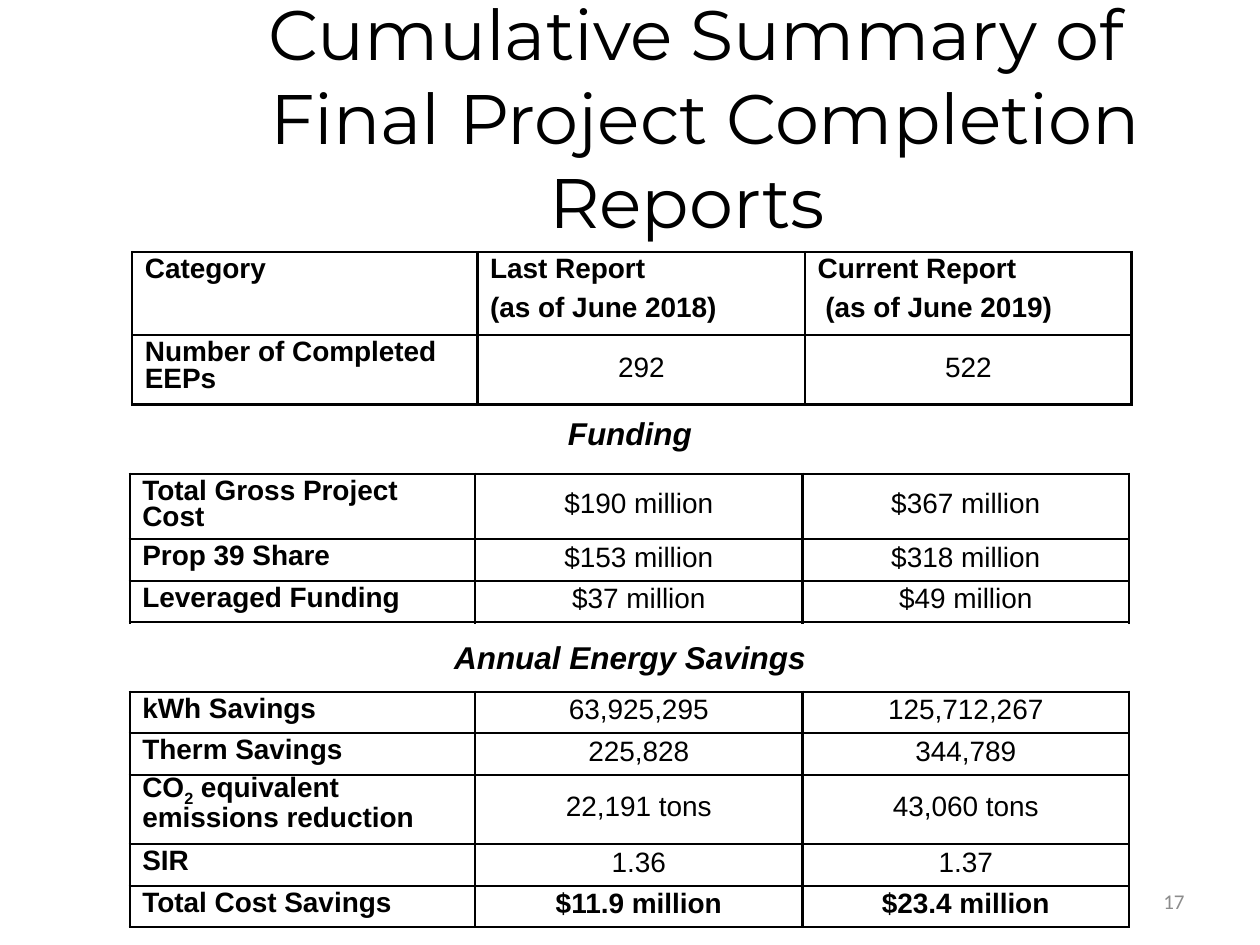
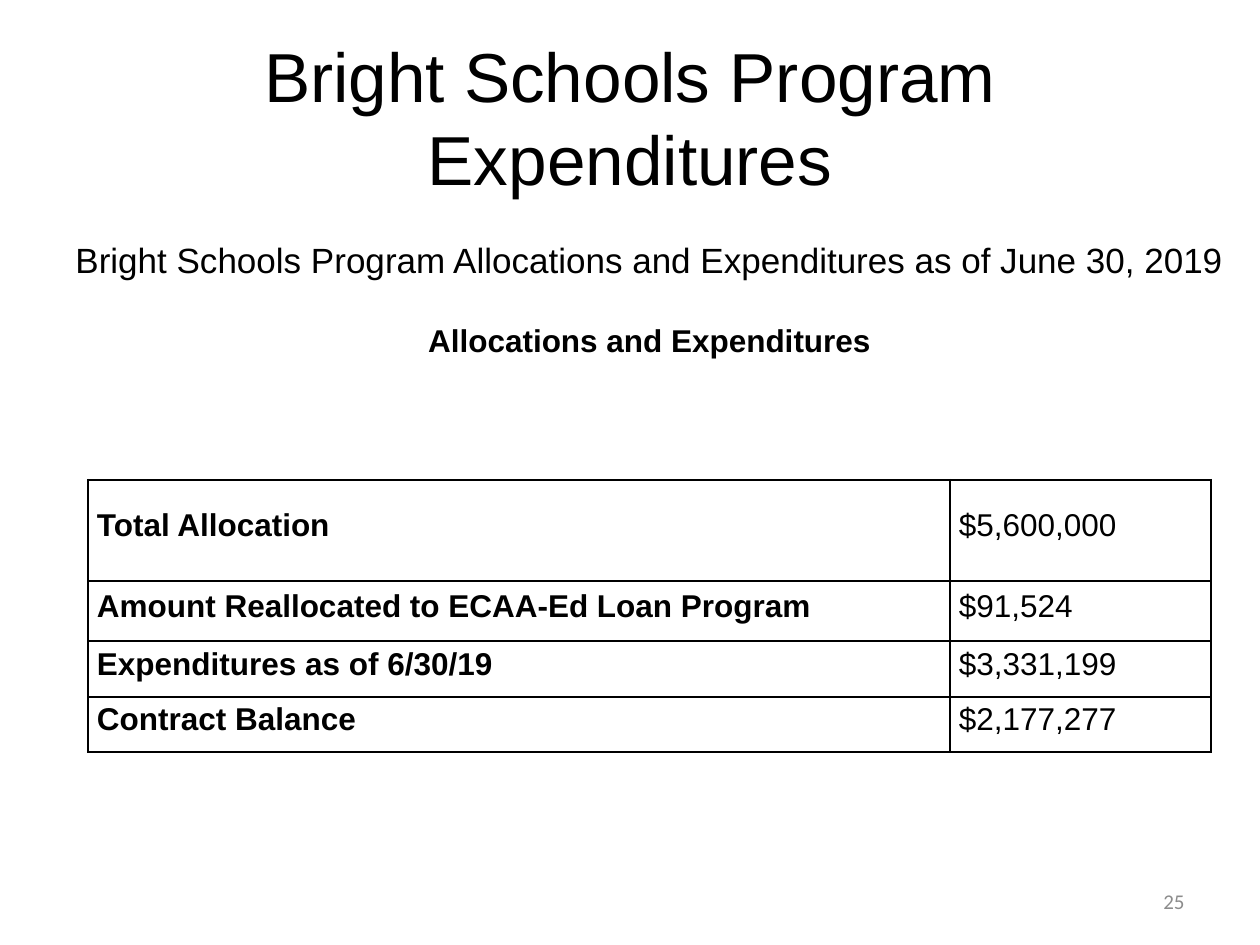
from lxml import etree
from pptx import Presentation
from pptx import util as u
from pptx.dml.color import RGBColor
from pptx.enum import text
from pptx.oxml.ns import qn

# Shared style
BLACK = RGBColor(0x00, 0x00, 0x00)
WHITE = RGBColor(0xFF, 0xFF, 0xFF)
GREY = RGBColor(0x8C, 0x8C, 0x8C)
BODY_FONT = "Arial"
LINE, AFTER = 15, 7
LEFT, CENTER, RIGHT = text.PP_ALIGN.LEFT, text.PP_ALIGN.CENTER, text.PP_ALIGN.RIGHT
TOP, MIDDLE = text.MSO_ANCHOR.TOP, text.MSO_ANCHOR.MIDDLE

# Table looks: column widths, text size, label anchor, value alignment, margins (side, top/bottom)
REPORT = dict(cols=(2.74, 2.6, 2.59), size=16, anchor=TOP, align=CENTER, margins=(0.1, 0.05))
BUDGET = dict(cols=(6.84, 2.07), size=18, anchor=MIDDLE, align=LEFT, margins=(0.07, 0))

# Content; a label given as a tuple has its odd parts in subscript
SLIDES = [
    dict(
        title="Cumulative Summary of\n Final Project Completion Reports ",
        title_box=(1.05, 0.3, 8.95, 1.25), title_font=("Montserrat", 40), number="17",
        captions=[
            ("Funding", (4.4, 3.33, 1.2, 0.31), dict(size=18, bold=True, italic=True)),
            ("Annual Energy Savings", (3.49, 5.11, 3.02, 0.31),
             dict(size=18, bold=True, italic=True)),
        ],
        tables=[
            dict(at=(1.05, 2), look=REPORT, heights=(0.66, 0.55), header=True, rows=[
                ("Category", "Last Report\n(as of June 2018)",
                 "Current Report\n (as of June 2019)"),
                ("Number of Completed EEPs", "292", "522"),
            ]),
            dict(at=(1.03, 3.76), look=REPORT, heights=(0.52, 0.33, 0.33), rows=[
                ("Total Gross Project Cost", "$190 million", "$367 million"),
                ("Prop 39 Share", "$153 million", "$318 million"),
                ("Leveraged Funding", "$37 million", "$49 million"),
            ]),
            dict(at=(1.03, 5.49), look=REPORT, heights=(0.33, 0.33, 0.55, 0.33, 0.33),
                 total=True, rows=[
                ("kWh Savings", "63,925,295", "125,712,267"),
                ("Therm Savings", "225,828", "344,789"),
                (("CO", "2", " equivalent emissions reduction"), "22,191 tons", "43,060 tons"),
                ("SIR", "1.36", "1.37"),
                ("Total Cost Savings", "$11.9 million", "$23.4 million"),
            ]),
        ],
    ),
    dict(
        title="Bright Schools Program\nExpenditures",
        title_box=(0.5, 0.3, 9, 1.25), title_font=(BODY_FONT, 39.6), number="25",
        captions=[
            ("Bright Schools Program Allocations and Expenditures as of June 30, 2019",
             (0.5, 1.84, 9.31, 0.44), dict(size=20, wrap=True, spaced=False)),
            ("Allocations and Expenditures", (3.28, 2.59, 3.75, 0.31), dict(size=18, bold=True)),
        ],
        tables=[
            dict(at=(0.7, 3.81), look=BUDGET, heights=(0.8, 0.48, 0.44, 0.44), rows=[
                ("Total Allocation", "$5,600,000"),
                ("Amount Reallocated to ECAA-Ed Loan Program", "$91,524"),
                ("Expenditures as of 6/30/19", "$3,331,199"),
                ("Contract Balance", "$2,177,277"),
            ]),
        ],
    ),
]


def inches(values):
    return [u.Inches(v) for v in values]


def style(p, size, name=BODY_FONT, color=BLACK, bold=False, italic=False,
          align=CENTER, spaced=True):
    """Format one paragraph; spaced gives the fixed line pitch of the report text."""
    p.alignment = align
    if spaced:
        p.line_spacing, p.space_after = u.Pt(LINE), u.Pt(AFTER)
    f = p.font
    f.name, f.size, f.bold, f.italic = name, u.Pt(size), bold, italic
    f.color.rgb = color


def add_title(s, content, box, font):
    sp = s.shapes.title
    sp.left, sp.top, sp.width, sp.height = inches(box)
    tf = sp.text_frame
    tf.auto_size, tf.vertical_anchor = text.MSO_AUTO_SIZE.NONE, MIDDLE
    p = tf.paragraphs[0]
    p.text = content
    style(p, font[1], name=font[0], spaced=False)


def add_text(s, content, box, wrap=False, anchor=TOP, **look):
    tf = s.shapes.add_textbox(*inches(box)).text_frame
    tf.word_wrap, tf.vertical_anchor = wrap, anchor
    p = tf.paragraphs[0]
    p.text = content
    style(p, **look)


def add_borders(cell):
    tc_pr = cell._tc.get_or_add_tcPr()
    for side in ("lnL", "lnR", "lnT", "lnB"):
        ln = etree.SubElement(tc_pr, qn(f"a:{side}"), w=str(u.Pt(1.5)))
        fill = etree.SubElement(ln, qn("a:solidFill"))
        etree.SubElement(fill, qn("a:srgbClr"), val=str(BLACK))


def fill_cell(cell, content, look, bold, align, anchor):
    add_borders(cell)
    cell.fill.solid()
    cell.fill.fore_color.rgb = WHITE
    side, edge = inches(look["margins"])
    cell.margin_left = cell.margin_right = side
    cell.margin_top = cell.margin_bottom = edge
    cell.vertical_anchor = anchor
    tf = cell.text_frame
    if isinstance(content, tuple):
        for i, part in enumerate(content):
            r = tf.paragraphs[0].add_run()
            r.text = part
            if i % 2:
                r._r.get_or_add_rPr().set("baseline", "-25000")
    else:
        tf.text = content
    for p in tf.paragraphs:
        style(p, look["size"], bold=bold, align=align)


def add_table(s, at, look, heights, rows, header=False, total=False):
    cols = look["cols"]
    frame = s.shapes.add_table(len(rows), len(cols), *inches((*at, sum(cols), sum(heights))))
    table = frame.table
    table.first_row = table.horz_banding = False
    for column, width in zip(table.columns, cols):
        column.width = u.Inches(width)
    for i, (row, height) in enumerate(zip(rows, heights)):
        table.rows[i].height = u.Inches(height)
        is_header = header and i == 0
        is_total = total and i == len(rows) - 1
        for j, content in enumerate(row):
            is_label = j == 0 or is_header
            fill_cell(table.cell(i, j), content, look,
                      bold=is_label or is_total,
                      align=LEFT if is_label else look["align"],
                      anchor=look["anchor"] if is_label else MIDDLE)


def main():
    prs = Presentation()
    prs.slide_width, prs.slide_height = inches((10, 7.5))
    for page in SLIDES:
        s = prs.slides.add_slide(prs.slide_layouts[5])
        add_title(s, page["title"], page["title_box"], page["title_font"])
        # Page number
        add_text(s, page["number"], (7.17, 6.95, 2.33, 0.4), wrap=True, anchor=MIDDLE,
                 size=12, name="Calibri", color=GREY, align=RIGHT, spaced=False)
        for content, box, look in page["captions"]:
            add_text(s, content, box, **look)
        for table in page["tables"]:
            add_table(s, **table)
    prs.save("out.pptx")


if __name__ == "__main__":
    main()
